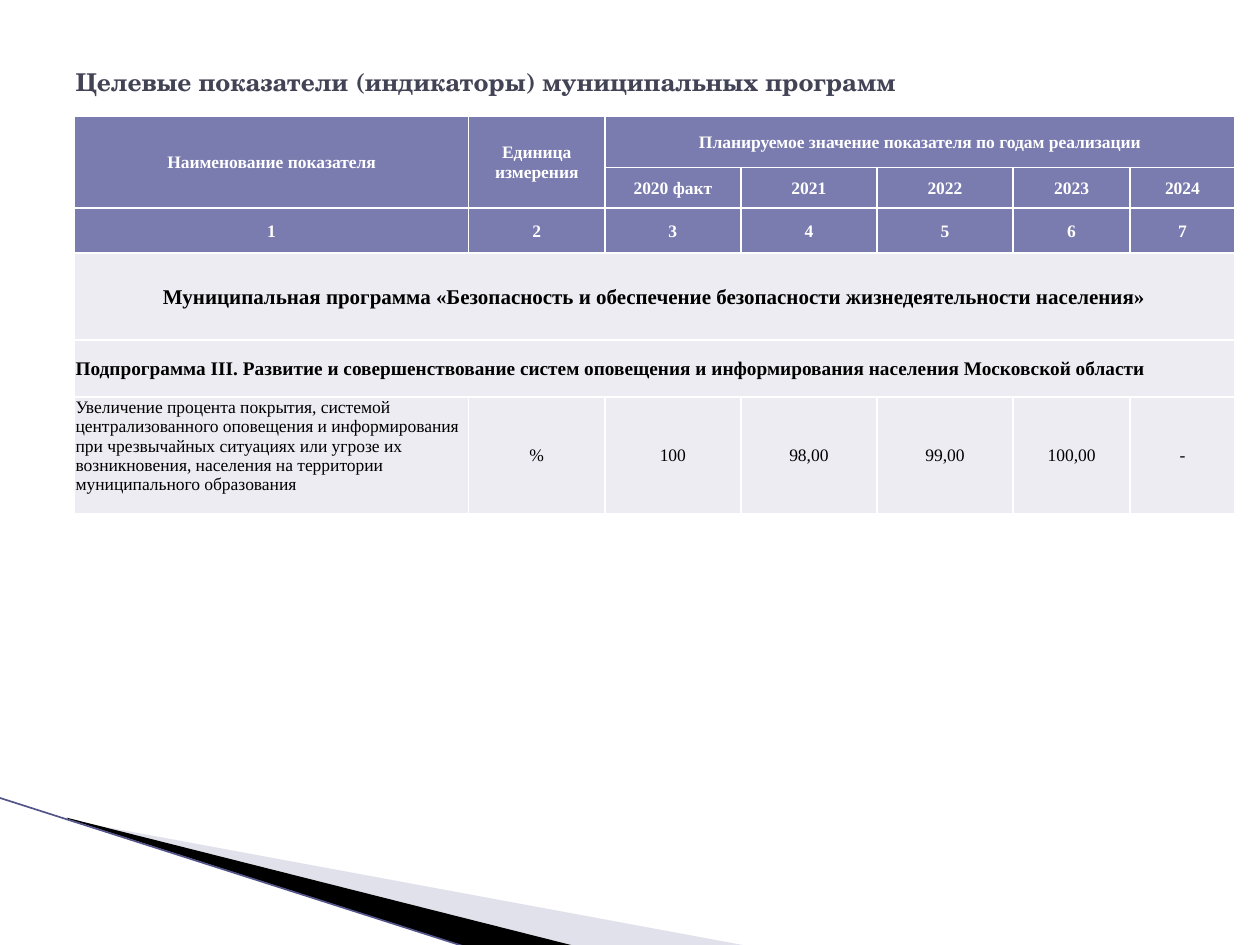
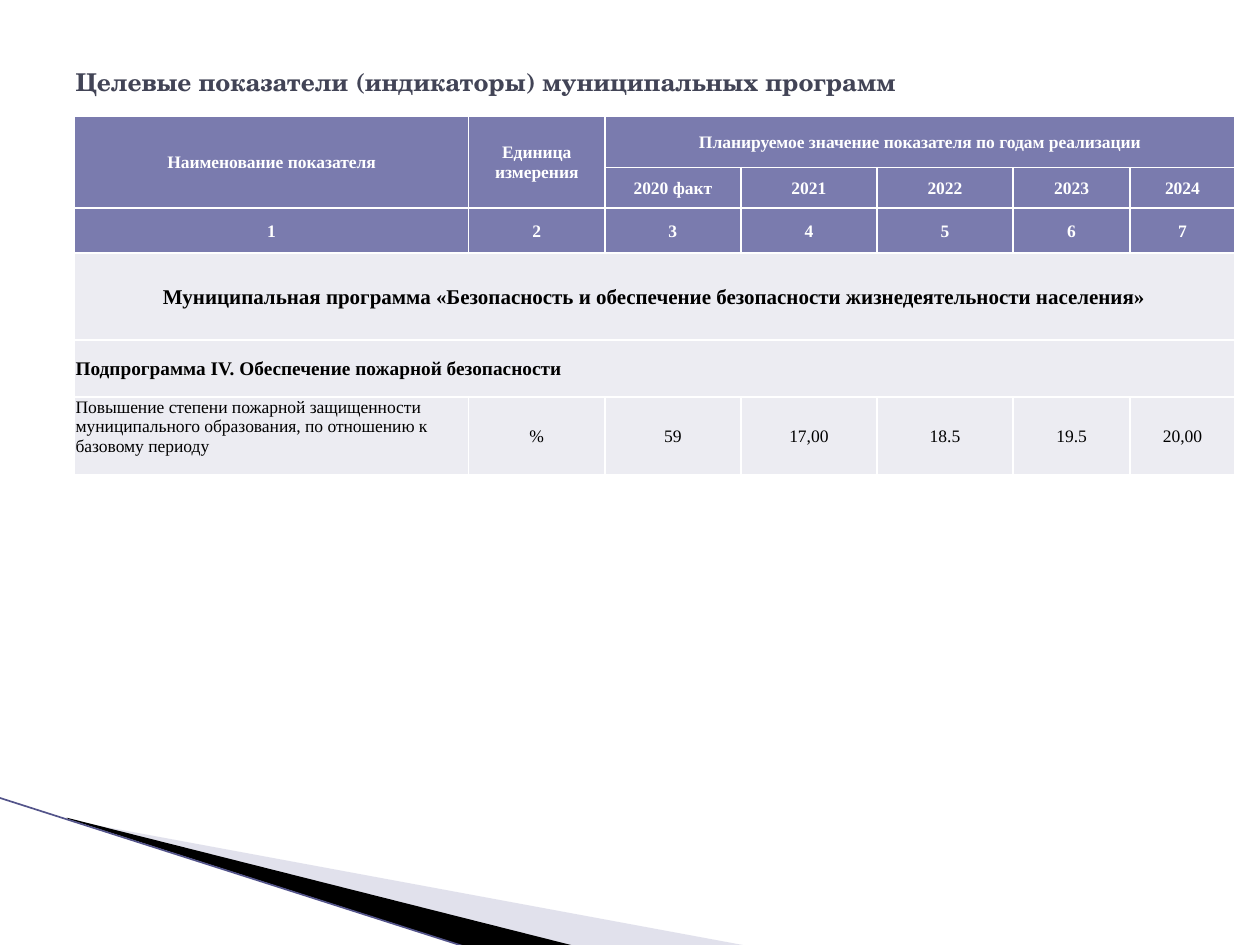
from lxml import etree
from pptx import Presentation
from pptx.dml.color import RGBColor
from pptx.enum import text
from pptx.oxml import ns
from pptx.util import Inches, Pt

HEADER = RGBColor(0x7A, 0x7B, 0xAE)
BODY = RGBColor(0xEC, 0xEC, 0xF2)
TITLE = RGBColor(0x42, 0x44, 0x56)
PALE = RGBColor(0xB6, 0xB6, 0xD1)
EDGE = RGBColor(0x53, 0x54, 0x8A)
WHITE = RGBColor(0xFF, 0xFF, 0xFF)
BLACK = RGBColor(0, 0, 0)

HEADING = "Целевые показатели (индикаторы) муниципальных программ"
PROGRAM = "Муниципальная программа «Безопасность и обеспечение безопасности жизнедеятельности населения»"
SUBPROGRAMS = [
    ("Подпрограмма III. Развитие и совершенствование систем оповещения и информирования населения Московской области",
     ["Увеличение процента покрытия, системой централизованного оповещения и информирования при чрезвычайных "
      "ситуациях или угрозе их возникновения, населения на территории муниципального образования",
      "%", "100", "98,00", "99,00", "100,00", "-"], 0.93),
    ("Подпрограмма IV. Обеспечение пожарной безопасности",
     ["Повышение степени пожарной защищенности муниципального образования, по отношению к базовому периоду",
      "%", "59", "17,00", "18.5", "19.5", "20,00"], 0.62),
]
COL_WIDTHS = [3.13, 1.08, 1.08, 1.08, 1.08, 0.93, 0.83]
ROW_HEIGHTS = [0.41, 0.32, 0.36, 0.69, 0.45]
MERGES = [((0, 0), (1, 0)), ((0, 1), (1, 1)), ((0, 2), (0, 6)),
          ((3, 0), (3, 6)), ((4, 0), (4, 6))]
MARGINS = {"margin_left": 0.01, "margin_right": 0.01, "margin_top": 0.01, "margin_bottom": 0}
HEADER_FONT = {"size": Pt(10), "bold": True}
ROW_FONTS = [HEADER_FONT] * 3 + [
    {"size": Pt(12), "bold": True},
    {"size": Pt(11), "bold": True},
    {"size": Pt(10), "bold": False},
]


def set_font(font, name, color, values):
    font.name = name
    font.color.rgb = color
    for key, value in values.items():
        setattr(font, key, value)


def add_borders(cell):
    """Draw a 1 pt white line on every side; call before filling the cell."""
    tc_pr = cell._tc.get_or_add_tcPr()
    for side in ("lnL", "lnR", "lnT", "lnB"):
        ln = etree.SubElement(tc_pr, ns.qn(f"a:{side}"), w=str(Pt(1)))
        fill = etree.SubElement(ln, ns.qn("a:solidFill"))
        etree.SubElement(fill, ns.qn("a:srgbClr"), val=str(WHITE))


prs = Presentation()
prs.slide_width, prs.slide_height = Inches(10), Inches(7.5)
layout = prs.slide_layouts[5]
slides = [prs.slides.add_slide(layout) for _ in SUBPROGRAMS]

# Corner wedges and edge line, shared through the layout
shapes = slides[0].shapes
wedges = [
    (PALE, [(0.55, 6.51), (5.95, 7.51), (4.56, 7.51), (0.55, 6.5)]),
    (BLACK, [(0.53, 6.49), (4.57, 7.51), (3.72, 7.52), (0.54, 6.5)]),
]
for color, points in wedges:
    points = [(Inches(x), Inches(y)) for x, y in points]
    builder = shapes.build_freeform(*points[0])
    builder.add_line_segments(points[1:])
    wedge = builder.convert_to_shape()
    wedge.shadow.inherit = False
    wedge.line.fill.background()
    wedge.fill.solid()
    wedge.fill.fore_color.rgb = color
    if color == PALE:
        clr = wedge.element.spPr.find(".//" + ns.qn("a:srgbClr"))
        etree.SubElement(clr, ns.qn("a:alpha"), val="40000")
    layout.shapes.element.append(wedge.element)

edge = shapes.add_connector(1, Inches(-0.01), Inches(6.33), Inches(3.71), Inches(7.52))
edge.line.color.rgb = EDGE
edge.line.width = Pt(0.95)
etree.SubElement(edge.element.spPr, ns.qn("a:effectLst"))
layout.shapes.element.append(edge.element)

for s, (subprogram, indicator, height) in zip(slides, SUBPROGRAMS):
    title = s.shapes.title
    title.left, title.top, title.width, title.height = map(Inches, (0.5, 0.3, 9, 0.69))
    tf = title.text_frame
    tf.text = HEADING
    tf.vertical_anchor = text.MSO_ANCHOR.MIDDLE
    p = tf.paragraphs[0]
    p.alignment = text.PP_ALIGN.LEFT
    set_font(p.runs[0].font, "TeX Gyre Schola", TITLE, {"size": Pt(14), "bold": True})

    rows = [
        ["Наименование показателя", "Единица измерения",
         "Планируемое значение показателя по годам реализации"],
        ["", "", "2020 факт", "2021", "2022", "2023", "2024"],
        [str(n) for n in range(1, 8)],
        [PROGRAM],
        [subprogram],
        indicator,
    ]
    heights = ROW_HEIGHTS + [height]
    table = s.shapes.add_table(len(rows), len(COL_WIDTHS), Inches(0.59), Inches(0.92),
                               Inches(sum(COL_WIDTHS)), Inches(sum(heights))).table
    table.first_row = table.horz_banding = False
    for column, width in zip(table.columns, COL_WIDTHS):
        column.width = Inches(width)
    for row, row_height in zip(table.rows, heights):
        row.height = Inches(row_height)
    for start, end in MERGES:
        table.cell(*start).merge(table.cell(*end))

    for r, values in enumerate(rows):
        for c in range(len(COL_WIDTHS)):
            cell = table.cell(r, c)
            add_borders(cell)
            cell.fill.solid()
            cell.fill.fore_color.rgb = HEADER if r < 3 else BODY
            for side, margin in MARGINS.items():
                setattr(cell, side, Inches(margin))
            is_name = r == 5 and c == 0
            cell.vertical_anchor = text.MSO_ANCHOR.TOP if is_name else text.MSO_ANCHOR.MIDDLE
            p = cell.text_frame.paragraphs[0]
            p.alignment = text.PP_ALIGN.LEFT if r == 4 or is_name else text.PP_ALIGN.CENTER
            set_font(p.font, "Times New Roman", WHITE if r < 3 else BLACK, ROW_FONTS[r])
            if c < len(values) and values[c]:
                run = p.add_run()
                run.text = values[c]
                set_font(run.font, "Times New Roman", WHITE if r < 3 else BLACK, ROW_FONTS[r])

prs.save("out.pptx")
